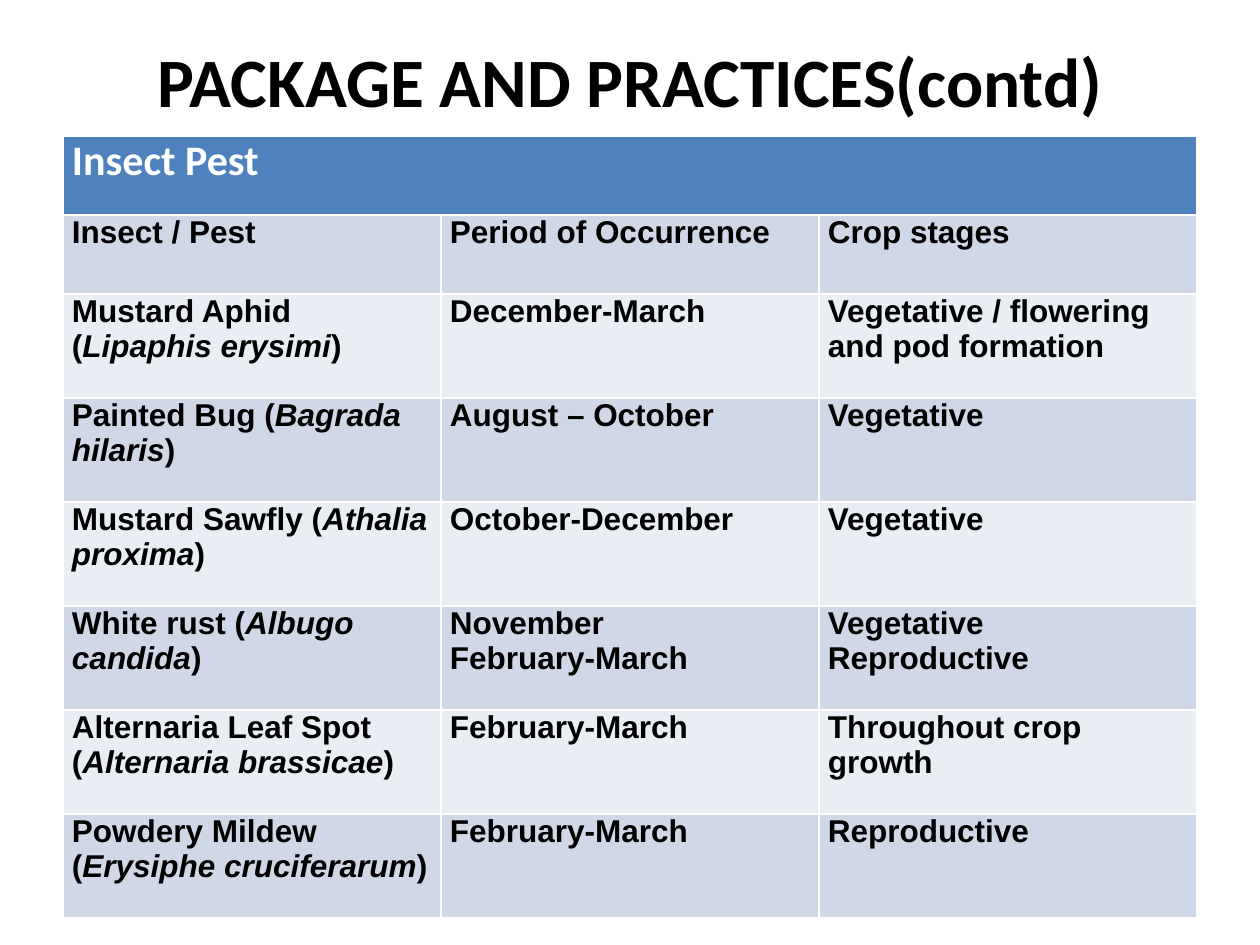
"""Build the insect pest slide with its title and table."""
from pptx import Presentation
from pptx.dml.color import RGBColor
from pptx.enum.text import MSO_ANCHOR, PP_ALIGN
from pptx.util import Pt

TITLE = "PACKAGE AND PRACTICES(contd)"
TABLE_TITLE = "Insect Pest"
HEADINGS = ("Insect / Pest", "Period of Occurrence", "Crop stages")
PESTS = [
    ("Mustard Aphid", "Lipaphis erysimi", "December-March",
     "Vegetative / flowering and pod formation"),
    ("Painted Bug", "Bagrada hilaris", "August – October", "Vegetative"),
    ("Mustard Sawfly", "Athalia proxima", "October-December", "Vegetative"),
    ("White rust", "Albugo candida", "November\nFebruary-March", "Vegetative\nReproductive"),
    ("Alternaria Leaf Spot", "Alternaria brassicae", "February-March", "Throughout crop growth"),
    ("Powdery Mildew", "Erysiphe cruciferarum", "February-March", "Reproductive"),
]

BLACK = RGBColor(0x00, 0x00, 0x00)
WHITE = RGBColor(0xFF, 0xFF, 0xFF)
BLUE = RGBColor(0x4F, 0x81, 0xBD)
BANDS = (RGBColor(0xE9, 0xED, 0xF4), RGBColor(0xD0, 0xD8, 0xE8))

EMU_PER_PX = 914400 // 126
LEFT, WIDTH = 63, 1134
TITLE_TOP, TITLE_HEIGHT = 38, 157
TABLE_TOP, HEAD_HEIGHT, PEST_HEIGHT = 136, 79, 104
CELL_MARGIN = 9


def px(length):
    return length * EMU_PER_PX


def set_font(paragraph, name, size, color):
    font = paragraph.font
    font.name, font.size, font.bold = name, Pt(size), True
    font.color.rgb = color


def format_cell(cell, fill, name, size, color):
    cell.margin_left = cell.margin_right = px(CELL_MARGIN)
    cell.margin_top = cell.margin_bottom = 0
    cell.fill.solid()
    cell.fill.fore_color.rgb = fill
    for paragraph in cell.text_frame.paragraphs:
        set_font(paragraph, name, size, color)


def write_pest(cell, common, latin):
    paragraph = cell.text_frame.paragraphs[0]
    for text, italic in ((f"{common} (", False), (latin, True), (")", False)):
        run = paragraph.add_run()
        run.text = text
        run.font.italic = italic


def add_title(slide):
    title = slide.shapes.title
    title.left, title.top = px(LEFT), px(TITLE_TOP)
    title.width, title.height = px(WIDTH), px(TITLE_HEIGHT)
    frame = title.text_frame
    frame.text = TITLE
    frame.margin_top = 0
    frame.vertical_anchor = MSO_ANCHOR.TOP
    paragraph = frame.paragraphs[0]
    paragraph.alignment = PP_ALIGN.CENTER
    set_font(paragraph, "Calibri", 39.6, BLACK)


def add_pest_table(slide):
    heights = [HEAD_HEIGHT] * 2 + [PEST_HEIGHT] * len(PESTS)
    table = slide.shapes.add_table(
        len(heights), len(HEADINGS), px(LEFT), px(TABLE_TOP), px(WIDTH), px(sum(heights))
    ).table
    for row, height in zip(table.rows, heights):
        row.height = px(height)

    banner = table.cell(0, 0)
    banner.merge(table.cell(0, len(HEADINGS) - 1))
    banner.text = TABLE_TITLE
    format_cell(banner, BLUE, "Calibri", 24, WHITE)

    for column, heading in enumerate(HEADINGS):
        table.cell(1, column).text = heading
    for row, (common, latin, period, stage) in enumerate(PESTS, start=2):
        write_pest(table.cell(row, 0), common, latin)
        table.cell(row, 1).text = period
        table.cell(row, 2).text = stage
    for row in range(1, len(heights)):
        for column in range(len(HEADINGS)):
            format_cell(table.cell(row, column), BANDS[row % 2], "Arial", 18, BLACK)


def main():
    presentation = Presentation()
    presentation.slide_width, presentation.slide_height = px(1260), px(945)
    slide = presentation.slides.add_slide(presentation.slide_layouts[5])
    add_title(slide)
    add_pest_table(slide)
    presentation.save("out.pptx")


if __name__ == "__main__":
    main()
